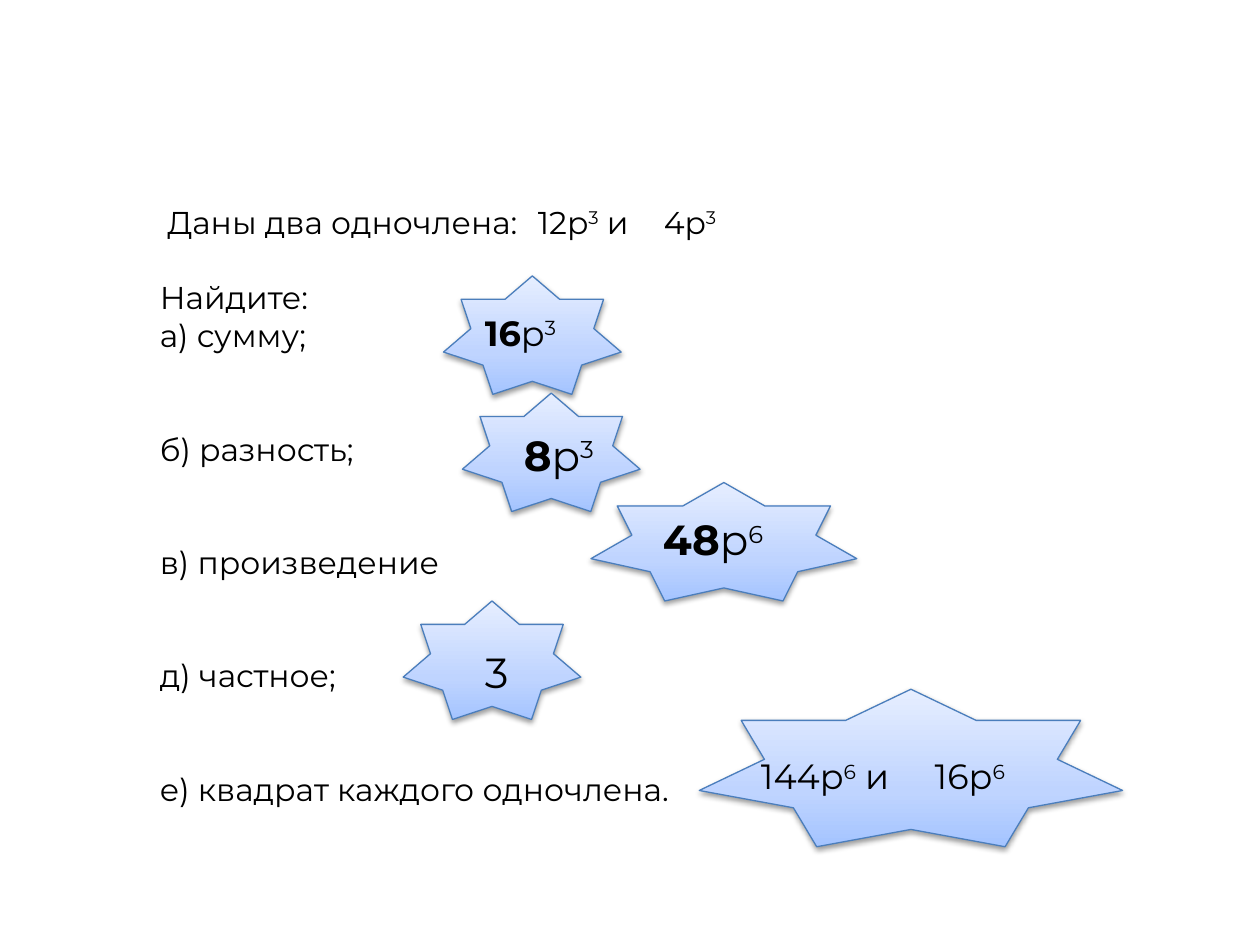
import copy
import pptx
import pptx.util
import pptx.dml.color
import pptx.enum.shapes
import pptx.enum.text
import pptx.oxml
from pptx.util import Inches

FONT = "Montserrat"
NS = 'xmlns:a="http://schemas.openxmlformats.org/drawingml/2006/main"'
STOPS = [(0, "A4C4FF"), (0.35, "BFD4FF"), (1, "E6EEFF")]
SHADOW = (f'<a:effectLst {NS}><a:outerShdw blurRad="40000" dist="20000" dir="5400000" '
          'rotWithShape="0"><a:srgbClr val="000000"><a:alpha val="38000"/></a:srgbClr>'
          '</a:outerShdw></a:effectLst>')

LINE = 21.6
TASK = [
    (0, [("Даны два одночлена:\t12p", ""), ("3", "sup"), (" и\t4p", ""), ("3", "sup")]),
    (1, [("Найдите:", "")]),
    (0, [("а) сумму;", "")]),
    (2, [("б) разность;", "")]),
    (2, [("в) произведение", "")]),
    (2, [("д) частное;", "")]),
    (2, [("е) квадрат каждого одночлена.", "")]),
]
STARS = [
    (3.52, 2.19, 1.41, 0.94),
    (3.67, 3.12, 1.41, 0.94),
    (4.69, 3.83, 2.11, 0.94),
    (3.2, 4.77, 1.41, 0.94),
    (5.55, 5.47, 3.36, 1.25),
]
PRODUCT_STAR = 2
PRODUCT = [("48", "bold"), ("p", ""), ("6", "sup")]
ANSWERS = [
    ((3.75, 2.42, 1.02, 0.44), 20, True, [("16", "bold"), ("p", ""), ("3", "sup")]),
    ((4.06, 3.36, 0.8, 0.5), 24, False, [("8", "bold"), ("p", ""), ("3", "sup")]),
    ((3.75, 5.08, 0.31, 0.5), 24, True, [("3", "")]),
    ((5.94, 5.94, 2.89, 0.44), 20, True,
     [("144p", ""), ("6", "sup"), (" и\t16p", ""), ("6", "sup")]),
]


def color(value):
    return pptx.dml.color.RGBColor.from_string(value)


def add_runs(p, runs, size):
    for text, style in runs:
        r = p.add_run()
        r.text = text
        r.font.name = FONT
        r.font.size = pptx.util.Pt(size)
        r.font.bold = style == "bold"
        r.font.color.rgb = color("000000")
        if style == "sup":
            r.font._element.set("baseline", "30000")


def add_tabs(p, *stops):
    tabs = "".join(f'<a:tab pos="{Inches(x)}" algn="l"/>' for x in stops)
    p._p.get_or_add_pPr().append(pptx.oxml.parse_xml(f"<a:tabLst {NS}>{tabs}</a:tabLst>"))


def add_box(s, at, wrap=True):
    tf = s.shapes.add_textbox(*map(Inches, at)).text_frame
    tf.word_wrap = wrap
    return tf


def add_star(s, at):
    sp = s.shapes.add_shape(pptx.enum.shapes.MSO_SHAPE.STAR_7_POINT, *map(Inches, at))
    sp.fill.gradient()
    sp.fill.gradient_angle = 90
    first = sp.fill.gradient_stops[0]._gs
    first.addnext(copy.deepcopy(first))
    for stop, (position, value) in zip(sp.fill.gradient_stops, STOPS):
        stop.position = position
        stop.color.rgb = color(value)
    sp.line.color.rgb = color("4B7EBC")
    sp.line.width = pptx.util.Pt(0.75)
    sp._element.spPr.append(pptx.oxml.parse_xml(SHADOW))
    return sp


def main():
    prs = pptx.Presentation()
    prs.slide_width, prs.slide_height = Inches(10), Inches(7.5)
    s = prs.slides.add_slide(prs.slide_layouts[6])

    tf = add_box(s, (1.17, 1.56, 5.55, 4.95))
    for i, (gap, runs) in enumerate(TASK):
        p = tf.add_paragraph() if i else tf.paragraphs[0]
        if gap:
            p.space_before = pptx.util.Pt(gap * LINE)
        add_runs(p, runs, 18)
    p = tf.paragraphs[0]
    add_tabs(p, 3.17, 4.22)
    p._p.pPr.set("indent", str(Inches(0.06)))

    stars = [add_star(s, at) for at in STARS]
    tf = stars[PRODUCT_STAR].text_frame
    tf.margin_right = Inches(0.27)
    tf.vertical_anchor = pptx.enum.text.MSO_ANCHOR.MIDDLE
    tf.paragraphs[0].alignment = pptx.enum.text.PP_ALIGN.CENTER
    add_runs(tf.paragraphs[0], PRODUCT, 24)

    for at, size, wrap, runs in ANSWERS:
        p = add_box(s, at, wrap).paragraphs[0]
        add_runs(p, runs, size)
        if any("\t" in text for text, style in runs):
            add_tabs(p, 1.38)

    prs.save("out.pptx")


if __name__ == "__main__":
    main()
